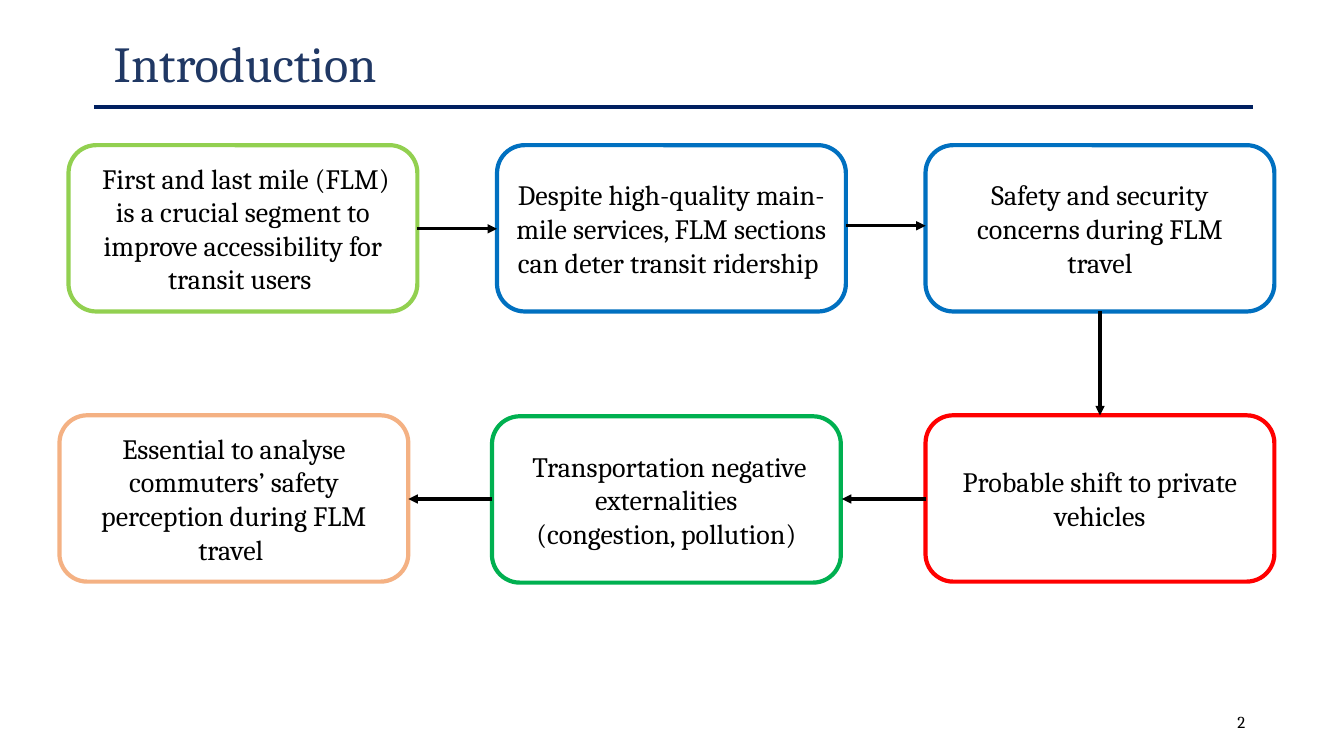
from dataclasses import dataclass

from lxml import etree
from pptx import Presentation
from pptx.dml.color import RGBColor
from pptx.enum.shapes import MSO_CONNECTOR, MSO_SHAPE
from pptx.enum.text import MSO_ANCHOR, PP_ALIGN
from pptx.oxml.ns import qn
from pptx.util import Inches, Pt

ROUND = MSO_SHAPE.ROUNDED_RECTANGLE
STRAIGHT = MSO_CONNECTOR.STRAIGHT
MIDDLE = MSO_ANCHOR.MIDDLE
LEFT, CENTER, RIGHT = PP_ALIGN.LEFT, PP_ALIGN.CENTER, PP_ALIGN.RIGHT


@dataclass(frozen=True)
class Theme:
    font: str = "Cambria"
    title: str = "203864"
    rule: str = "002060"
    ink: str = "000000"
    paper: str = "FFFFFF"
    lime: str = "92D050"
    blue: str = "0070C0"
    red: str = "FF0000"
    green: str = "00B050"
    peach: str = "F4B183"
    head_size: int = 36
    body_size: int = 20
    page_size: int = 12
    edge: float = 3
    arrow: float = 2.25


THEME = Theme()
BOX_W, BOX_H = 3.46, 1.65
TOP, LOW = 1.44, 4.12

# Left, top, border and paragraphs of each step, in reading order
STEPS = [
    (0.68, TOP, THEME.lime,
     [" First and last mile (FLM) is a crucial segment to improve "
      "accessibility for transit users "]),
    (4.93, TOP, THEME.blue,
     ["Despite high-quality main-mile services, FLM sections can deter "
      "transit ridership "]),
    (9.18, TOP, THEME.blue,
     ["Safety and security concerns during FLM travel"]),
    (9.18, LOW, THEME.red, ["Probable shift to private vehicles"]),
    (4.88, LOW + 0.01, THEME.green,
     [" Transportation negative externalities", "(congestion, pollution)"]),
    (0.59, LOW, THEME.peach,
     ["Essential to analyse commuters’ safety perception during FLM "
      "travel "]),
]

# Start and end of each arrow
ARROWS = [
    ((4.14, 2.27), (4.93, 2.27)),
    ((8.39, 2.24), (9.18, 2.24)),
    ((10.91, 3.09), (10.91, 4.12)),
    ((9.18, 4.95), (8.35, 4.95)),
    ((4.88, 4.95), (4.05, 4.95)),
]


def color(code):
    return RGBColor.from_string(code)


def fill_text(shape, lines, size, ink, align, space=None):
    frame = shape.text_frame
    frame.word_wrap = True
    frame.vertical_anchor = MIDDLE
    frame.text = "\n".join(lines)
    style = {"name": THEME.font, "size": Pt(size)}
    for para in frame.paragraphs:
        para.alignment = align
        para.line_spacing = space
        for run in para.runs:
            for key, value in style.items():
                setattr(run.font, key, value)
            run.font.color.rgb = color(ink)


def add_label(slide, place, text, size, ink, align, space=None):
    box = slide.shapes.add_textbox(*map(Inches, place))
    fill_text(box, [text], size, ink, align, space)


def add_step(slide, left, top, edge, lines):
    place = map(Inches, (left, top, BOX_W, BOX_H))
    box = slide.shapes.add_shape(ROUND, *place)
    box.shadow.inherit = False
    box.fill.solid()
    box.fill.fore_color.rgb = color(THEME.paper)
    box.line.color.rgb = color(edge)
    box.line.width = Pt(THEME.edge)
    fill_text(box, lines, THEME.body_size, THEME.ink, CENTER)


def add_line(slide, start, end, ink, width, head=False):
    ends = map(Inches, (*start, *end))
    link = slide.shapes.add_connector(STRAIGHT, *ends)
    link.line.color.rgb = color(ink)
    link.line.width = Pt(width)
    if head:
        line = link.line._get_or_add_ln()
        etree.SubElement(line, qn("a:tailEnd"), type="triangle")
    etree.SubElement(link._element.spPr, qn("a:effectLst"))


def main():
    deck = Presentation()
    deck.slide_width, deck.slide_height = Inches(13.33), Inches(7.5)
    slide = deck.slides.add_slide(deck.slide_layouts[6])

    # Heading and rule
    add_line(slide, (0.93, 1.06), (12.43, 1.06), THEME.rule, THEME.edge)
    add_label(slide, (1.03, 0.35, 11.5, 0.62), "Introduction",
              THEME.head_size, THEME.title, LEFT, 0.9)

    # Flow of steps
    for step in STEPS:
        add_step(slide, *step)
    for start, end in ARROWS:
        add_line(slide, start, end, THEME.ink, THEME.arrow, head=True)

    # Page number
    add_label(slide, (11.91, 6.96, 0.54, 0.4), "2",
              THEME.page_size, THEME.ink, RIGHT)

    deck.save("out.pptx")


if __name__ == "__main__":
    main()
